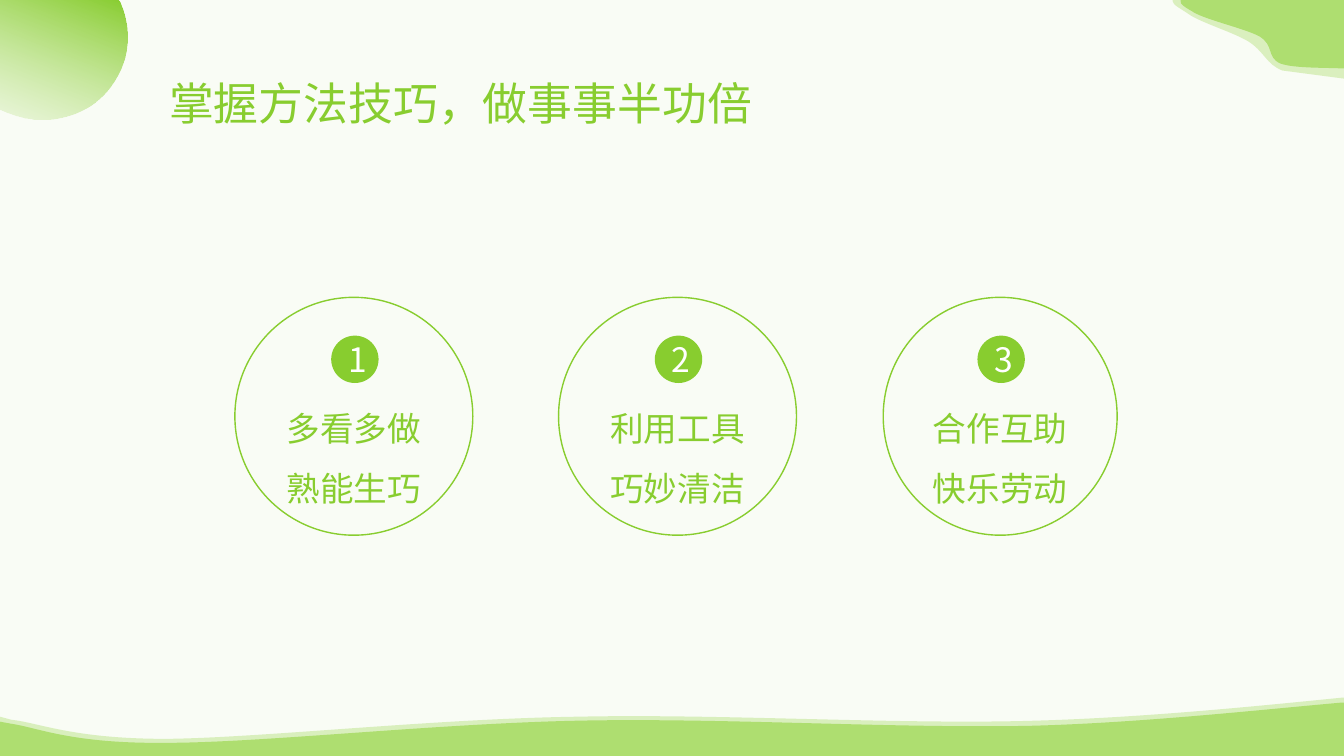
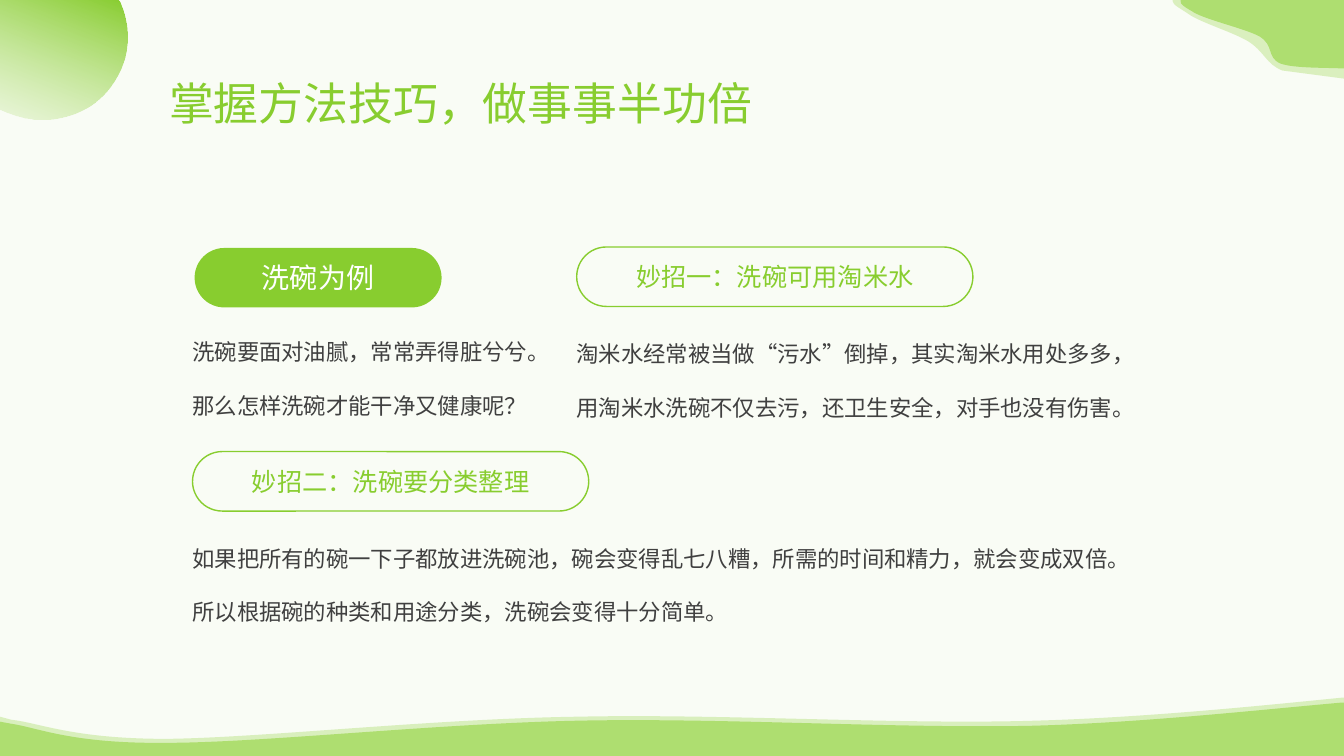
from lxml import etree
from pptx import Presentation
from pptx.dml.color import RGBColor
from pptx.enum.shapes import MSO_SHAPE
from pptx.enum.text import MSO_ANCHOR, PP_ALIGN
from pptx.oxml.ns import qn
from pptx.util import Inches, Pt

OVAL, PILL = MSO_SHAPE.OVAL, MSO_SHAPE.ROUNDED_RECTANGLE
TOP, MIDDLE = MSO_ANCHOR.TOP, MSO_ANCHOR.MIDDLE
LEFT, CENTER, JUSTIFY = PP_ALIGN.LEFT, PP_ALIGN.CENTER, PP_ALIGN.JUSTIFY

FONT = "Noto Sans CJK SC"
GREEN, LIGHT_GREEN = "88CD2F", "AEDE70"
PAPER, WHITE, INK = "F9FCF5", "FFFFFF", "404040"
TITLE = "掌握方法技巧，做事事半功倍"

PALE_WAVE = [
    (13.33, 6.92), (13.33, 7.47), (0, 7.47), (0, 7.11), (0.11, 7.14),
    (0.39, 7.17, 0.72, 7.33, 1.65, 7.33), (2.59, 7.32, 4.3, 7.13, 5.74, 7.11),
    (7.17, 7.08, 8.91, 7.19, 10.25, 7.15), (11.35, 7.12, 12.52, 7, 13.32, 6.92),
]
WAVE = [
    (13.33, 6.97), (13.33, 7.5), (0, 7.5), (0, 7.16), (0.11, 7.18),
    (0.38, 7.22, 0.71, 7.38, 1.65, 7.37), (2.59, 7.37, 4.3, 7.18, 5.73, 7.15),
    (7.17, 7.12, 8.9, 7.23, 10.25, 7.2), (11.34, 7.17, 12.52, 7.04, 13.31, 6.97),
]
PALE_CORNER = [
    (11.63, 0), (13.33, 0), (13.33, 0.78), (12.72, 0.7),
    (12.56, 0.64, 12.54, 0.51, 12.38, 0.41), (12.23, 0.32, 11.9, 0.22, 11.79, 0.14),
    (11.72, 0.09, 11.63, 0.05, 11.63, 0.01),
]
CORNER = [
    (11.71, 0), (13.33, 0), (13.33, 0.68), (13.32, 0.68),
    (13.17, 0.67, 12.83, 0.68, 12.7, 0.63), (12.56, 0.57, 12.64, 0.45, 12.49, 0.36),
    (12.34, 0.28, 11.93, 0.19, 11.82, 0.11), (11.75, 0.07, 11.7, 0.04, 11.71, 0.01),
]
BALL = [
    (0, 0), (1.17, 0), (1.19, 0.02),
    (1.28, 0.22, 1.3, 0.45, 1.21, 0.67), (1.04, 1.1, 0.53, 1.31, 0.07, 1.12),
    (0, 1.09),
]


def rgb(code):
    """Turn a hex string into a colour."""
    return RGBColor.from_string(code)


def set_alpha(shape, percent):
    """Set the opacity of the first colour in a shape's fill."""
    colour = next(shape.element.spPr.iter(qn("a:srgbClr")))
    etree.SubElement(colour, qn("a:alpha")).set("val", str(percent * 1000))


def style(shape, fill=None, line=None):
    """Give a shape its flat fill and outline."""
    shape.shadow.inherit = False
    if fill:
        shape.fill.solid()
        shape.fill.fore_color.rgb = rgb(fill)
    else:
        shape.fill.background()
    if line:
        shape.line.color.rgb = rgb(line)
        shape.line.width = Pt(1)
    else:
        shape.line.fill.background()


def write(shape, *lines, size, color, align=CENTER, anchor=MIDDLE, spacing=1.0):
    """Write one paragraph per line of text into a shape."""
    frame = shape.text_frame
    frame.word_wrap = True
    frame.vertical_anchor = anchor
    for index, line in enumerate(lines):
        para = frame.add_paragraph() if index else frame.paragraphs[0]
        para.alignment = align
        para.line_spacing = spacing
        span = para.add_run()
        span.text = line
        span.font.size = Pt(size)
        span.font.name = FONT
        span.font.color.rgb = rgb(color)
        etree.SubElement(span.font._element, qn("a:ea")).set("typeface", FONT)


def add_box(page, kind, left, top, width, height, fill=None, line=None):
    """Add a styled preset shape."""
    box = page.shapes.add_shape(
        kind, Inches(left), Inches(top), Inches(width), Inches(height))
    style(box, fill, line)
    return box


def add_text(page, left, top, width, height, *lines, **look):
    """Add a text box anchored at its top."""
    box = page.shapes.add_textbox(
        Inches(left), Inches(top), Inches(width), Inches(height))
    write(box, *lines, anchor=TOP, **look)


def bend(shape, outline):
    """Turn the six-number segments of a freeform into cubic curves."""
    steps = next(shape.element.spPr.iter(qn("a:path")))
    for step, segment in zip(list(steps)[1:], outline[1:]):
        if len(segment) == 2:
            continue
        step.tag = qn("a:cubicBezTo")
        for index in (0, 2):
            point = etree.Element(qn("a:pt"))
            point.set("x", str(Inches(segment[index]) - shape.left))
            point.set("y", str(Inches(segment[index + 1]) - shape.top))
            step.insert(index // 2, point)


def add_outline(page, outline, alpha=100):
    """Add a closed light green outline of corners and curves."""
    start, *rest = [(Inches(step[-2]), Inches(step[-1])) for step in outline]
    builder = page.shapes.build_freeform(*start)
    builder.add_line_segments(rest, close=True)
    shape = builder.convert_to_shape()
    bend(shape, outline)
    style(shape, LIGHT_GREEN)
    if alpha < 100:
        set_alpha(shape, alpha)
    return shape


def add_page(deck):
    """Add a page with the shared background, decoration and title."""
    page = deck.slides.add_slide(deck.slide_layouts[6])
    page.background.fill.solid()
    page.background.fill.fore_color.rgb = rgb(PAPER)
    add_outline(page, PALE_WAVE, alpha=42)
    add_outline(page, WAVE)
    add_outline(page, PALE_CORNER, alpha=41)
    add_outline(page, CORNER)
    ball = add_outline(page, BALL)
    ball.fill.gradient()
    ball.fill.gradient_angle = 68.4
    for stop, code in zip(ball.fill.gradient_stops, (LIGHT_GREEN, GREEN)):
        stop.color.rgb = rgb(code)
    set_alpha(ball, 21)
    add_text(page, 1.58, 0.34, 6.96, 1, TITLE,
             size=32, color=GREEN, align=JUSTIFY, spacing=1.68)
    return page


def add_method(page, left, top, width, number, lines):
    """Add a ring with its number badge and two lines."""
    badge_size = 0.47
    ring = add_box(page, OVAL, left, top, width, 2.36, line=GREEN)
    frame = ring.text_frame
    frame.margin_left = frame.margin_right = Inches(0.08)
    frame.margin_top, frame.margin_bottom = Inches(0.67), Inches(0.04)
    write(ring, *lines, size=24, color=GREEN, spacing=1.5)
    badge = add_box(page, OVAL, left + (width - badge_size) / 2 + 0.01, top + 0.38,
                    badge_size, badge_size, fill=GREEN)
    write(badge, str(number), size=24, color=WHITE)


def add_tip(page, left, top, width, heading, lines, pill_width=3.93,
            indent=0.1, gap=0.61, size=18, solid=False):
    """Add a pill heading with its body text below."""
    add_text(page, left, top + gap, width, 1.1, *lines,
             size=16, color=INK, align=LEFT, spacing=2.0)
    pill = add_box(page, PILL, left + indent, top, pill_width, 0.59,
                   fill=GREEN if solid else None, line=None if solid else GREEN)
    pill.adjustments[0] = 0.5
    write(pill, heading, size=size, color=WHITE if solid else GREEN)


def build_methods(deck):
    """Build the page of three methods."""
    page = add_page(deck)
    methods = [
        (2.33, 2.36, ("多看多做", "熟能生巧")),
        (5.54, 2.36, ("利用工具", "巧妙清洁")),
        (8.76, 2.32, ("合作互助", "快乐劳动")),
    ]
    for number, (left, width, lines) in enumerate(methods, 1):
        add_method(page, left, 2.95, width, number, lines)


def build_dishes(deck):
    """Build the page of dishwashing tips."""
    page = add_page(deck)
    add_tip(page, 1.81, 2.46, 3.7, "洗碗为例",
            ["洗碗要面对油腻，常常弄得脏兮兮。", "那么怎样洗碗才能干净又健康呢？"],
            pill_width=2.45, indent=0.12, gap=0.58, size=20, solid=True)
    add_tip(page, 5.62, 2.45, 5.75, "妙招一：洗碗可用淘米水",
            ["淘米水经常被当做“污水”倒掉，其实淘米水用处多多，"
             "用淘米水洗碗不仅去污，还卫生安全，对手也没有伤害。"])
    add_tip(page, 1.81, 4.48, 9.46, "妙招二：洗碗要分类整理",
            ["如果把所有的碗一下子都放进洗碗池，碗会变得乱七八糟，"
             "所需的时间和精力，就会变成双倍。",
             "所以根据碗的种类和用途分类，洗碗会变得十分简单。"])


def main():
    """Build and save the deck."""
    deck = Presentation()
    deck.slide_width, deck.slide_height = Inches(13.33), Inches(7.5)
    build_methods(deck)
    build_dishes(deck)
    deck.save("out.pptx")


if __name__ == "__main__":
    main()
